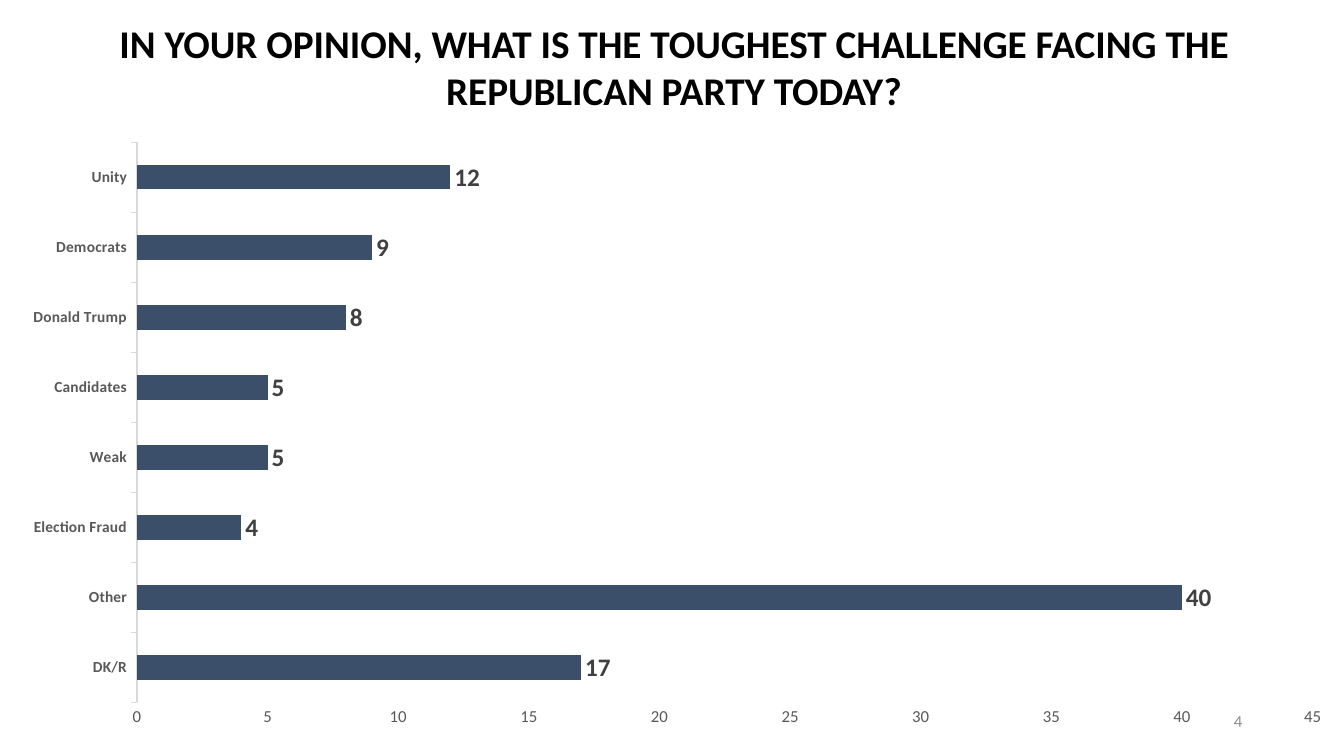
from lxml import etree
from pptx import Presentation
from pptx.chart.data import CategoryChartData
from pptx.dml.color import RGBColor
from pptx.enum.chart import XL_CHART_TYPE, XL_LABEL_POSITION, XL_TICK_MARK
from pptx.enum.text import MSO_ANCHOR, PP_ALIGN
from pptx.oxml.ns import qn
from pptx.util import Inches, Pt

BAR = XL_CHART_TYPE.BAR_CLUSTERED
OUTER = XL_LABEL_POSITION.OUTSIDE_END
NONE, OUT = XL_TICK_MARK.NONE, XL_TICK_MARK.OUTSIDE
TOP, MIDDLE = MSO_ANCHOR.TOP, MSO_ANCHOR.MIDDLE
CENTER, RIGHT = PP_ALIGN.CENTER, PP_ALIGN.RIGHT

COLORS = {
    "title": "000000",
    "number": "8C8C8C",
    "bar": "3B4F6A",
    "axis": "595959",
    "line": "D9D9D9",
    "label": "404040",
}
ANSWERS = {
    "DK/R": 17,
    "Other": 40,
    "Election Fraud": 4,
    "Weak": 5,
    "Candidates": 5,
    "Donald Trump": 8,
    "Democrats": 9,
    "Unity": 12,
}
PLOT = {"x": 0.103, "y": 0.018, "w": 0.884, "h": 0.91}


def style(font, size, color, bold=False):
    values = {"name": "Calibri", "size": Pt(size), "bold": bold}
    for key, value in values.items():
        setattr(font, key, value)
    font.color.rgb = RGBColor.from_string(COLORS[color])


def write(shape, text, box, anchor, align, font):
    for key, value in zip(("left", "top", "width", "height"), box):
        setattr(shape, key, Inches(value))
    frame = shape.text_frame
    frame.word_wrap = True
    frame.vertical_anchor = anchor
    frame.text = text
    para = frame.paragraphs[0]
    para.alignment = align
    style(para.runs[0].font, *font)


deck = Presentation()
deck.slide_width, deck.slide_height = Inches(13.33), Inches(7.5)
slide = deck.slides.add_slide(deck.slide_layouts[5])

write(
    slide.shapes.title,
    "IN YOUR OPINION, WHAT IS THE TOUGHEST CHALLENGE FACING THE REPUBLICAN PARTY TODAY?",
    (0.04, 0.14, 13.29, 1.04), TOP, CENTER, (28, "title", True),
)
number = slide.shapes.add_textbox(0, 0, 0, 0)
write(number, "4", (9.42, 6.95, 3, 0.4), MIDDLE, RIGHT, (12, "number"))

data = CategoryChartData()
data.categories = list(ANSWERS)
data.add_series("Series 1", list(ANSWERS.values()))
chart = slide.shapes.add_chart(
    BAR, Inches(0), Inches(1.3), Inches(13.19), Inches(6.11), data
).chart
chart.has_legend = False
chart.has_title = False
style(chart.font, 10, "title")

cats, vals = chart.category_axis, chart.value_axis
for axis, tick, size, bold in ((cats, OUT, 11, True), (vals, NONE, 12, False)):
    axis.has_major_gridlines = False
    axis.major_tick_mark = tick
    axis.minor_tick_mark = NONE
    style(axis.tick_labels.font, size, "axis", bold)
cats.format.line.color.rgb = RGBColor.from_string(COLORS["line"])
cats.format.line.width = Pt(0.75)
vals.format.line.fill.background()
vals.minimum_scale, vals.maximum_scale, vals.major_unit = 0, 45, 5

plot = chart.plots[0]
plot.gap_width = 182
plot.vary_by_categories = False
series = plot.series[0]
series.format.fill.solid()
series.format.fill.fore_color.rgb = RGBColor.from_string(COLORS["bar"])
labels = series.data_labels
labels.show_value = True
labels.position = OUTER
style(labels.font, 18, "label", True)

area = chart.element.find(".//" + qn("c:plotArea"))
for old in area.findall(qn("c:layout")):
    area.remove(old)
layout = etree.Element(qn("c:layout"))
manual = etree.SubElement(layout, qn("c:manualLayout"))
rules = {"layoutTarget": "inner", "xMode": "edge", "yMode": "edge", **PLOT}
for key, value in rules.items():
    etree.SubElement(manual, qn("c:" + key), val=str(value))
area.insert(0, layout)

deck.save("out.pptx")
